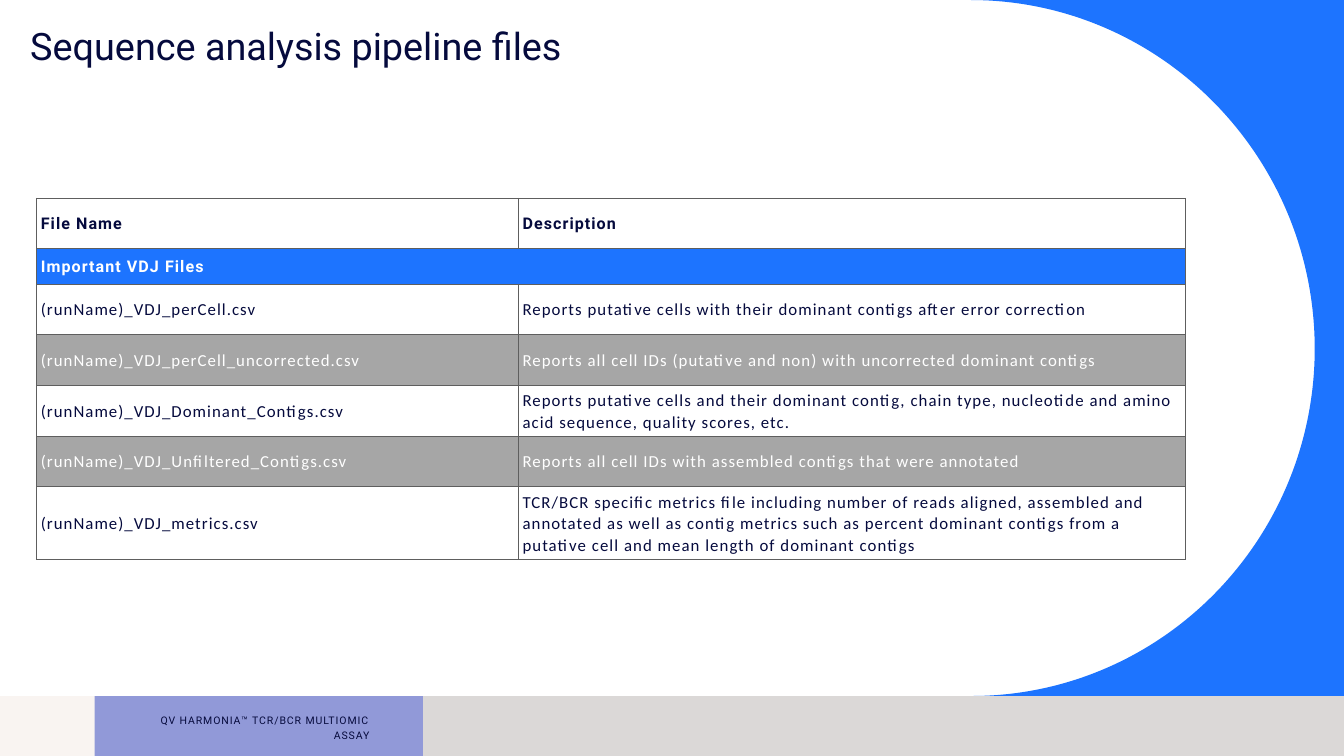
from dataclasses import dataclass

from lxml.etree import SubElement
from pptx import Presentation
from pptx.dml.color import RGBColor
from pptx.enum.shapes import MSO_SHAPE as Shape
from pptx.enum.text import MSO_ANCHOR as Anchor, MSO_AUTO_SIZE as AutoSize, PP_ALIGN as Align
from pptx.oxml.ns import qn
from pptx.util import Inches, Pt


@dataclass(frozen=True)
class Theme:
    heading_font: str = "Roboto"
    body_font: str = "Calibri"
    navy: str = "050A3D"
    footer_text: str = "060A3C"
    white: str = "FFFFFF"
    blue: str = "1D74FF"
    band: str = "A6A6A6"
    border: str = "5E5E5E"
    footer_bar: str = "DBD8D7"
    footer_panel: str = "9199D8"
    footer_corner: str = "F9F4F1"
    title_size: int = 54
    header_size: int = 23
    body_size: int = 24
    footer_size: int = 15


theme = Theme()


def fill_solid(shape, color):
    shape.fill.solid()
    shape.fill.fore_color.rgb = RGBColor.from_string(color)


def add_text(frame, text, font, size, color, bold=False, line_spacing=1.0, tracking=0):
    paragraph = frame.paragraphs[0]
    paragraph.line_spacing = line_spacing
    run = paragraph.add_run()
    run.text = text
    run.font.name = font
    run.font.size = Pt(size)
    run.font.bold = bold
    run.font.color.rgb = RGBColor.from_string(color)
    if tracking:
        run.font._element.set("spc", str(round(tracking * 100)))
    return paragraph


presentation = Presentation()
presentation.slide_width = Inches(26.67)
presentation.slide_height = Inches(15)
slide = presentation.slides.add_slide(presentation.slide_layouts[5])

footer_top = 13.81
curve_points = [
    (23.03, 0.01), (26.08, 3.1), (26.09, 6.91),
    (26.09, 10.72), (23.04, 13.81), (19.27, 13.81),
]
corners = [(26.67, footer_top), (26.67, 0)]
builder = slide.shapes.build_freeform(Inches(19.27), 0)
builder.add_line_segments([(Inches(x), Inches(y)) for x, y in curve_points + corners])
side_curve = builder.convert_to_shape()
segments = list(side_curve._element.iter(qn("a:lnTo")))
for first in (0, 3):
    group = segments[first:first + 3]
    bezier = group[0].makeelement(qn("a:cubicBezTo"))
    group[0].addprevious(bezier)
    for segment in group:
        bezier.append(segment[0])
        segment.getparent().remove(segment)
side_curve.shadow.inherit = False
side_curve.line.fill.background()
fill_solid(side_curve, theme.blue)

footer_parts = [
    (26.67, theme.footer_bar),
    (8.39, theme.footer_panel),
    (1.88, theme.footer_corner),
]
for width, color in footer_parts:
    shape = slide.shapes.add_shape(
        Shape.RECTANGLE, 0, Inches(footer_top), Inches(width), Inches(15 - footer_top)
    )
    shape.shadow.inherit = False
    shape.line.fill.background()
    fill_solid(shape, color)

footer = slide.shapes.add_textbox(Inches(2.66), Inches(14.22), Inches(4.77), Inches(0.39))
frame = footer.text_frame
frame.word_wrap = True
frame.auto_size = AutoSize.SHAPE_TO_FIT_TEXT
frame.vertical_anchor = Anchor.MIDDLE
frame.margin_left = frame.margin_top = frame.margin_bottom = Inches(0.06)
frame.margin_right = Inches(0.1)
paragraph = add_text(
    frame, "QV HARMONIA™ TCR/BCR MULTIOMIC ASSAY", theme.heading_font,
    theme.footer_size, theme.footer_text, line_spacing=1.2, tracking=1.3,
)
paragraph.alignment = Align.RIGHT

title = slide.shapes.title
title.left, title.top = Inches(0.5), Inches(0.5)
title.width, title.height = Inches(14.89), Inches(2.97)
title.text_frame.vertical_anchor = Anchor.TOP
title.text_frame.auto_size = AutoSize.NONE
paragraph = add_text(
    title.text_frame, "Sequence analysis pipeline files", theme.heading_font,
    theme.title_size, theme.navy, line_spacing=0.9,
)
paragraph.alignment = Align.LEFT

rows = [
    ("File Name", "Description"),
    ("Important VDJ Files",),
    ("(runName)_VDJ_perCell.csv",
     "Reports putative cells with their dominant contigs after error correction"),
    ("(runName)_VDJ_perCell_uncorrected.csv",
     "Reports all cell IDs (putative and non) with uncorrected dominant contigs"),
    ("(runName)_VDJ_Dominant_Contigs.csv",
     "Reports putative cells and their dominant contig, chain type, nucleotide and amino "
     "acid sequence, quality scores, etc."),
    ("(runName)_VDJ_Unfiltered_Contigs.csv",
     "Reports all cell IDs with assembled contigs that were annotated"),
    ("(runName)_VDJ_metrics.csv",
     "TCR/BCR specific metrics file including number of reads aligned, assembled and "
     "annotated as well as contig metrics such as percent dominant contigs from a "
     "putative cell and mean length of dominant contigs"),
]
section_row = 1
table_shape = slide.shapes.add_table(
    len(rows), 2, Inches(0.73), Inches(3.93), Inches(22.8), Inches(7.13)
)
table = table_shape.table
table.first_row = False
table.horz_banding = False
for column, width in zip(table.columns, (9.56, 13.24)):
    column.width = Inches(width)
table.cell(section_row, 0).merge(table.cell(section_row, 1))

for row_index, texts in enumerate(rows):
    is_section = row_index == section_row
    is_heading = row_index <= section_row
    is_band = row_index > section_row and row_index % 2 == 1
    table.rows[row_index].height = Inches(0.71 if is_section else 1)
    background = theme.blue if is_section else theme.band if is_band else theme.white
    text_color = theme.white if is_section or is_band else theme.navy
    font = theme.heading_font if is_heading else theme.body_font
    size = theme.header_size if is_heading else theme.body_size
    for cell, text in zip(table.rows[row_index].cells, texts):
        cell.vertical_anchor = Anchor.MIDDLE
        cell.margin_left = cell.margin_right = Inches(0.08)
        cell.margin_top = cell.margin_bottom = Inches(0.08)
        add_text(cell.text_frame, text, font, size, text_color,
                 bold=is_heading, line_spacing=1.07, tracking=1.5)
        properties = cell._tc.get_or_add_tcPr()
        for side in ("a:lnL", "a:lnR", "a:lnT", "a:lnB"):
            border = SubElement(properties, qn(side), w=str(Pt(1)))
            border_fill = SubElement(border, qn("a:solidFill"))
            SubElement(border_fill, qn("a:srgbClr"), val=theme.border)
        fill_solid(cell, background)

presentation.save("out.pptx")
